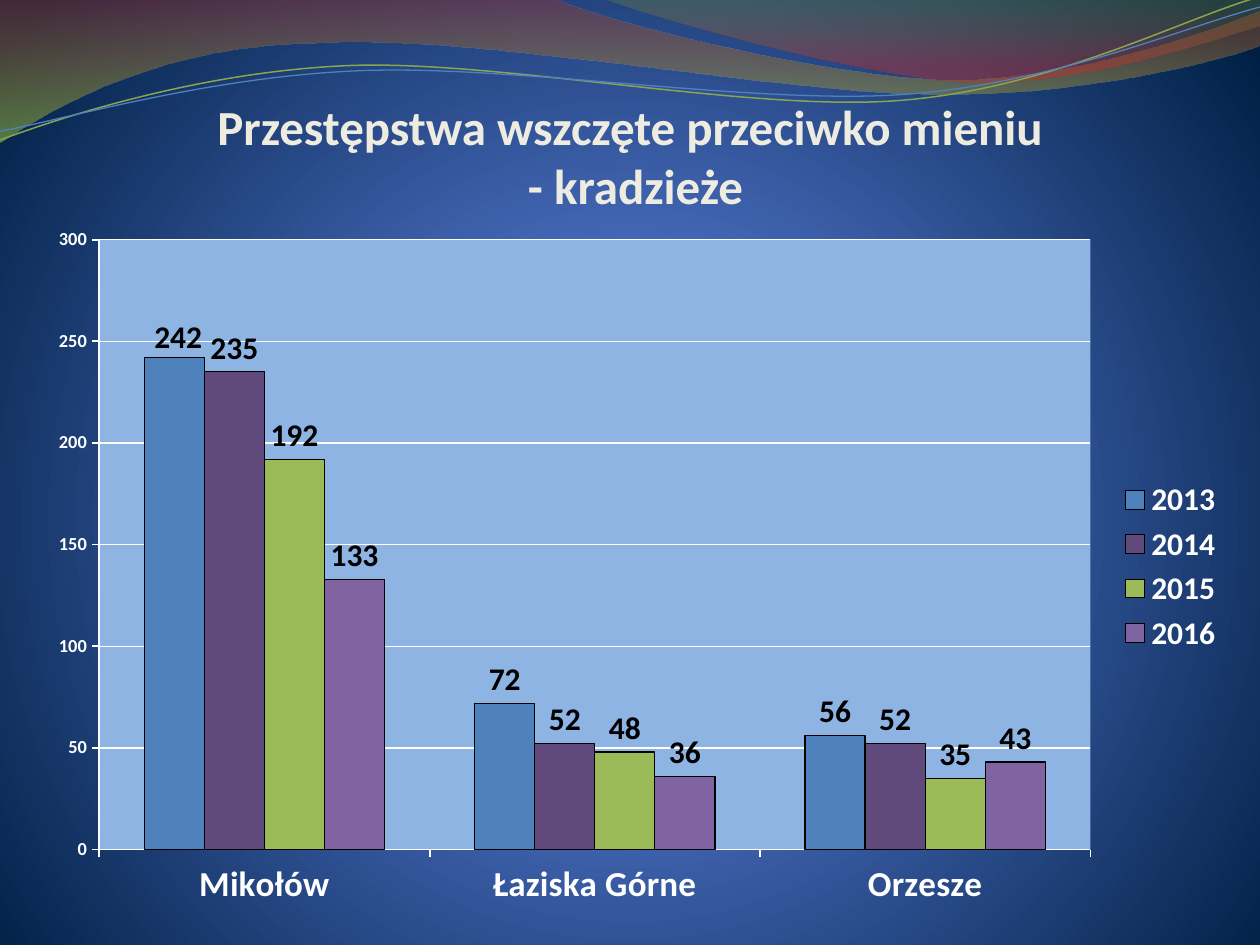
from math import cos, radians, sin

from pptx import Presentation
from pptx.chart.data import CategoryChartData
from pptx.dml.color import RGBColor
from pptx.enum.chart import XL_CHART_TYPE, XL_LABEL_POSITION, XL_LEGEND_POSITION, XL_TICK_MARK
from pptx.enum.text import MSO_ANCHOR, MSO_AUTO_SIZE, PP_ALIGN
from pptx.oxml import parse_xml
from pptx.oxml.ns import nsdecls, qn
from pptx.util import Pt

COLUMN = XL_CHART_TYPE.COLUMN_CLUSTERED
ABOVE = XL_LABEL_POSITION.OUTSIDE_END
RIGHT = XL_LEGEND_POSITION.RIGHT
OUTSIDE = XL_TICK_MARK.OUTSIDE
BOTTOM = MSO_ANCHOR.BOTTOM
FIXED = MSO_AUTO_SIZE.NONE
CENTER = PP_ALIGN.CENTER
rgb = RGBColor.from_string


def put(item, vals):
    """Set each format value on the item."""
    for name, val in vals.items():
        setattr(item, name, val)


def blend(owner, fill, stops, tail):
    """Give the owner's fill a gradient of (position, colour, opacity) stops."""
    fill.gradient()
    old = owner.element.find(".//" + qn("a:gradFill"))
    marks = "".join(
        f'<a:gs pos="{pos * 1000}"><a:srgbClr val="{tone}">'
        f'<a:alpha val="{alpha * 1000}"/></a:srgbClr></a:gs>'
        for pos, tone, alpha in stops)
    old.getparent().replace(old, parse_xml(
        f'<a:gradFill {nsdecls("a")} rotWithShape="1">'
        f'<a:gsLst>{marks}</a:gsLst>{tail}</a:gradFill>'))


deck = Presentation()
put(deck, {"slide_width": Pt(720), "slide_height": Pt(540)})
slide = deck.slides.add_slide(deck.slide_layouts[5])

# Background
blend(slide, slide.background.fill,
      [(0, "4D75D6", 100), (25, "4E72C7", 100), (100, "001F44", 100)],
      '<a:path path="circle"><a:fillToRect l="10000" t="110000" r="10000" b="100000"/></a:path>')

# Waves: start point, then lines (one point) and cubic curves (three points)
waves = [
    ([(0, -0.7), (317, -0.7), (343, 12, 478, 45.5, 546, 45.5),
      (614, 45.5, 690, 18.5, 720, 6.5), (720.5, 26),
      (708, 31.5, 626, 54.5, 537, 54), (448, 54, 275, 20, 185, 24.5),
      (93, 25, 33, 60, -0.5, 81.5)],
     [(0, "973330", 45), (100, "95C238", 55)], None),
    ([(345, -0.7), (366, 8, 491, 44.5, 554, 47),
      (616, 49.5, 692, 23, 720, 15), (720, 0)],
     [(0, "769537", 30), (80, "BE3330", 45)], None),
    ([(0, 80), (35, 67, 114, 41, 199, 37.5), (284, 34, 427, 64, 513, 57.5),
      (600, 51, 675, 11, 718.5, -1.5)], None, ("89A54F", 0.85)),
    ([(0, 75), (34, 69, 118, 44, 204, 40.5), (290, 36.5, 430, 60, 516, 54),
      (602, 48, 678, 15, 720, 4)], None, ("4F81BD", 0.75)),
]
TILT, MID_X, MID_Y = 2.7, 359.5, 41.7
for route, stops, line in waves:
    turn = radians(TILT if line else 0)
    legs = []
    for leg in route:
        pairs = [(x - MID_X, y - MID_Y) for x, y in zip(leg[::2], leg[1::2])]
        legs.append([(Pt(MID_X + x * cos(turn) - y * sin(turn)),
                      Pt(MID_Y + x * sin(turn) + y * cos(turn))) for x, y in pairs])
    pen = slide.shapes.build_freeform(*legs[0][0], scale=1.0)
    pen.add_line_segments([leg[-1] for leg in legs[1:]], close=line is None)
    wave = pen.convert_to_shape()
    wave.shadow.inherit = False
    # Bend the segments that have control points
    for old, leg in zip(list(wave.element.iter(qn("a:lnTo"))), legs[1:]):
        if len(leg) == 3:
            dots = "".join(f'<a:pt x="{x - wave.left}" y="{y - wave.top}"/>' for x, y in leg)
            old.getparent().replace(old, parse_xml(
                f'<a:cubicBezTo {nsdecls("a")}>{dots}</a:cubicBezTo>'))
    if line:
        wave.rotation = 360 - TILT
        wave.fill.background()
        wave.line.color.rgb = rgb(line[0])
        wave.line.width = Pt(line[1])
    else:
        blend(wave, wave.fill, stops, '<a:lin ang="5400000" scaled="1"/>')
        wave.line.fill.background()

# Title, in front of the waves
title = slide.shapes.title
put(title, {"left": Pt(36), "top": Pt(55.5), "width": Pt(648), "height": Pt(67)})
frame = title.text_frame
put(frame, {"text": "Przestępstwa wszczęte przeciwko mieniu\v - kradzieże",
            "auto_size": FIXED, "word_wrap": True, "vertical_anchor": BOTTOM,
            "margin_left": 0, "margin_right": 0, "margin_top": Pt(3.6), "margin_bottom": 0})
head = frame.paragraphs[0]
head.alignment = CENTER
for run in head.runs:
    put(run.font, {"size": Pt(28), "name": "Calibri", "bold": True})
    run.font.color.rgb = rgb("EEECE1")
slide.shapes.element.append(title.element)

# Chart
years = [
    ("2013", (242, 72, 56), "4F81BD"),
    ("2014", (235, 52, 52), "604A7B"),
    ("2015", (192, 48, 35), "9BBB59"),
    ("2016", (133, 36, 43), "8064A2"),
]
data = CategoryChartData()
data.categories = ["Mikołów", "Łaziska Górne", "Orzesze"]
for year, vals, tone in years:
    data.add_series(year, vals)
chart = slide.shapes.add_chart(
    COLUMN, Pt(20.16), Pt(122.4), Pt(686.16), Pt(402.48), data).chart
put(chart, {"has_title": False, "has_legend": True})
put(chart.font, {"size": Pt(18), "name": "Calibri"})
chart.font.color.rgb = rgb("FFFFFF")
put(chart.legend, {"position": RIGHT, "include_in_layout": False})
put(chart.legend.font, {"size": Pt(18), "bold": True})
chart.legend.font.color.rgb = rgb("FFFFFF")

# Columns and their labels
plot = chart.plots[0]
put(plot, {"gap_width": 150, "overlap": 0, "vary_by_categories": False})
for bars, (year, vals, tone) in zip(plot.series, years):
    bars.format.fill.solid()
    bars.format.fill.fore_color.rgb = rgb(tone)
    bars.format.line.color.rgb = rgb("000000")
    bars.format.line.width = Pt(0.75)
    put(bars.data_labels, {"show_value": True, "position": ABOVE})
first = plot.series[0].points[0].data_label
first.position = ABOVE
for label in [first] + [bars.data_labels for bars in plot.series]:
    put(label.font, {"size": Pt(18), "bold": True})
    label.font.color.rgb = rgb("000000")

# Axes
put(chart.value_axis, {"minimum_scale": 0, "maximum_scale": 300, "major_unit": 50,
                       "has_major_gridlines": True})
grid = chart.value_axis.major_gridlines.format.line
for axis, size in ((chart.category_axis, 20), (chart.value_axis, 10.5)):
    axis.major_tick_mark = OUTSIDE
    put(axis.tick_labels.font, {"size": Pt(size), "bold": True})
    axis.tick_labels.font.color.rgb = rgb("FFFFFF")
for line, width in ((grid, 0.75), (chart.category_axis.format.line, 1),
                    (chart.value_axis.format.line, 1)):
    line.color.rgb = rgb("FFFFFF")
    line.width = Pt(width)

# Places in percent of the chart: plot area, and the shift of the first label
area = chart.element.find(".//" + qn("c:plotArea"))
for old in area.findall(qn("c:layout")):
    area.remove(old)
inner = {"layoutTarget": "inner", "xMode": "edge", "yMode": "edge",
         "x": 5.33 / 100, "y": 3.63 / 100, "w": 82.55 / 100, "h": 86.6 / 100}
shift = {"x": 0.33 / 100, "y": 0.5 / 100}
for part, spot, vals in ((area, 0, inner), (area.find(".//" + qn("c:dLbl")), 1, shift)):
    marks = "".join(f'<c:{key} val="{val}"/>' for key, val in vals.items())
    part.insert(spot, parse_xml(
        f'<c:layout {nsdecls("c")}><c:manualLayout>{marks}</c:manualLayout></c:layout>'))
area.append(parse_xml(
    f'<c:spPr {nsdecls("c", "a")}><a:solidFill><a:srgbClr val="8EB4E3"/></a:solidFill></c:spPr>'))

deck.save("out.pptx")
